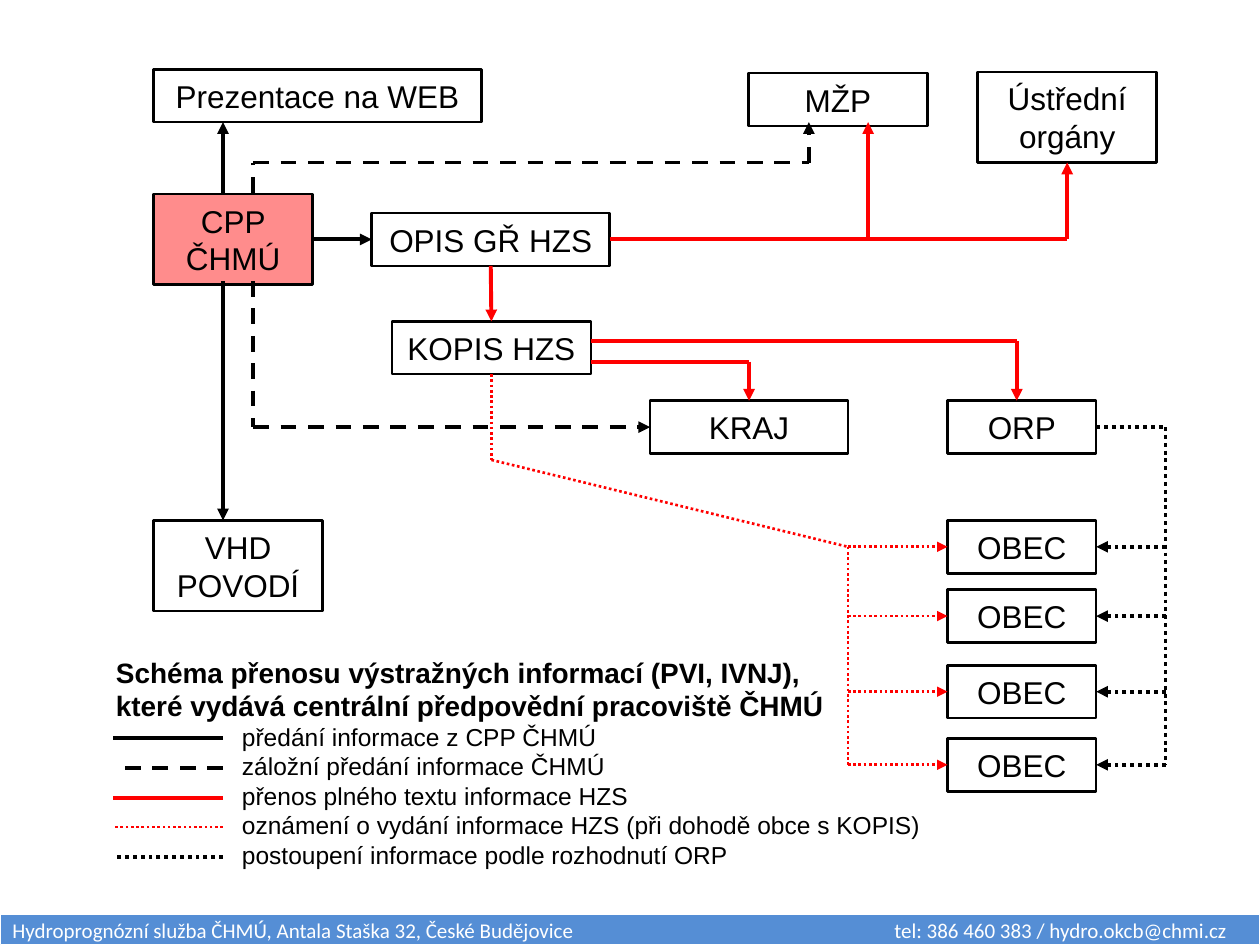
"""Builds a flow chart of how flood warnings are passed on."""
from dataclasses import dataclass
from typing import Any, Union

from lxml.etree import SubElement
from pptx import Presentation
from pptx.dml.color import RGBColor
from pptx.enum.dml import MSO_LINE
from pptx.enum.shapes import MSO_CONNECTOR, MSO_SHAPE
from pptx.enum.text import MSO_ANCHOR, MSO_AUTO_SIZE, PP_ALIGN
from pptx.oxml.ns import qn
from pptx.util import Inches, Pt

HUES = {"ink": "000000", "red": "FF0000", "blue": "558ED5", "white": "FFFFFF"}
COLS, ROWS = 100, 75
LOW, TALL = 4.2, 7.2
TOP, LEFT, BASE, RIGHT = range(4)
FRAME = {"word_wrap": True, "auto_size": MSO_AUTO_SIZE.NONE}
MID = FRAME | {"vertical_anchor": MSO_ANCHOR.MIDDLE}
FLUSH = FRAME | {"vertical_anchor": MSO_ANCHOR.TOP, "margin_left": 0,
                 "margin_right": 0, "margin_top": 0, "margin_bottom": 0}


@dataclass(frozen=True)
class Box:
    """A labelled frame, in grid columns and rows."""
    text: str
    x: float
    y: float
    w: float
    h: float = LOW


@dataclass(frozen=True)
class Pen:
    """A line style."""
    hue: str
    width: float = 2.25
    dash: Any = None


@dataclass(frozen=True)
class Joint:
    """The middle of one side of a box."""
    box: str
    side: int


Stop = Union[Joint, tuple]


@dataclass(frozen=True)
class Route:
    """A chain of straight lines."""
    pen: Pen
    stops: tuple
    arrow: bool = True


SOLID = Pen("ink")
SPARE = Pen("ink", dash=MSO_LINE.DASH)
FULL = Pen("red")
NOTE = Pen("red", 1.5, MSO_LINE.ROUND_DOT)
PASS = Pen("ink", dash=MSO_LINE.ROUND_DOT)

TOWNS = {f"obec{i}": Box("OBEC", 75.2, y, 11.8)
         for i, y in enumerate((41.3, 46.8, 52.8, 58.6))}
BOXES = {
    "web": Box("Prezentace na WEB", 12.2, 5.5, 26),
    "mzp": Box("MŽP", 59.4, 5.8, 14.2),
    "state": Box("Ústřední orgány", 77.6, 5.7, 14.2, TALL),
    "cpp": Box("CPP ČHMÚ", 12.2, 15.4, 12.6, TALL),
    "opis": Box("OPIS GŘ HZS", 29.5, 16.9, 18.9),
    "kopis": Box("KOPIS HZS", 31.1, 25.5, 15.8),
    "kraj": Box("KRAJ", 51.6, 31.8, 15.7),
    "orp": Box("ORP", 75.2, 31.8, 11.8),
    "vhd": Box("VHD POVODÍ", 12.2, 41.3, 13.4, TALL),
} | TOWNS
MAIN, SIDE, RED, BLACK = 17.7, 20.1, 67.3, 92.5
MIDS = {name: town.y + LOW / 2 for name, town in TOWNS.items()}
FIRST, LAST = MIDS["obec0"], MIDS["obec3"]

ROUTES = [
    Route(SOLID, (Joint("cpp", RIGHT), Joint("opis", LEFT))),
    Route(SOLID, ((MAIN, 15.3), (MAIN, 9.7))),
    Route(SOLID, ((MAIN, 22.3), (MAIN, 41.3))),
    Route(SPARE, ((SIDE, 15.3), (SIDE, 12.9), (64.2, 12.9), (64.2, 9.7))),
    Route(SPARE, ((SIDE, 22.3), (SIDE, 33.9), Joint("kraj", LEFT))),
    Route(FULL, (Joint("opis", BASE), Joint("kopis", TOP))),
    Route(FULL, (Joint("opis", RIGHT), (84.7, 19), Joint("state", BASE))),
    Route(FULL, ((68.9, 19), (68.9, 9.7))),
    Route(FULL, ((46.9, 27.1), (80.7, 27.1), (80.7, 31.8))),
    Route(FULL, ((46.9, 28.7), (59.45, 28.7), Joint("kraj", TOP))),
    Route(NOTE, (Joint("kopis", BASE), (39, 36.5), (RED, FIRST), (RED, LAST)), False),
    Route(PASS, (Joint("orp", RIGHT), (BLACK, 33.9), (BLACK, LAST)), False),
]
for name, mid in MIDS.items():
    ROUTES += [Route(NOTE, ((RED, mid), Joint(name, LEFT))),
               Route(PASS, ((BLACK, mid), Joint(name, RIGHT)))]

HEAD = ("Schéma přenosu výstražných informací (PVI, IVNJ),",
        "které vydává centrální předpovědní pracoviště ČHMÚ")
KEY = {
    "předání informace z CPP ČHMÚ": SOLID,
    "záložní předání informace ČHMÚ": SPARE,
    "přenos plného textu informace HZS": FULL,
    "oznámení o vydání informace HZS (při dohodě obce s KOPIS)": NOTE,
    "postoupení informace podle rozhodnutí ORP": PASS,
}
STEP = 2.35
ROUTES += [Route(pen, ((MAIN, 58.6 + STEP * i), (9, 58.6 + STEP * i)), False)
           for i, pen in enumerate(KEY.values())]
FOOT = ("Hydroprognózní služba ČHMÚ, Antala Staška 32, České Budějovice"
        "\ttel: 386 460 383 / hydro.okcb@chmi.cz")

deck = Presentation()
deck.slide_width, deck.slide_height = Inches(10), Inches(7.5)
slide = deck.slides.add_slide(deck.slide_layouts[1])


def hue(name: str) -> RGBColor:
    """Look up a colour."""
    return RGBColor.from_string(HUES[name])


def spot(x: float, y: float) -> tuple:
    """Turn columns and rows into slide lengths."""
    return round(deck.slide_width * x / COLS), round(deck.slide_height * y / ROWS)


def apply(item: Any, form: dict) -> None:
    """Set every attribute in a format dict."""
    for key, value in form.items():
        setattr(item, key, value)


def write(shape: Any, lines: tuple, size: float, ink: str = "ink", face: str = "Arial",
          bold: bool = False, align: Any = PP_ALIGN.LEFT, form: dict = MID) -> None:
    """Fill a shape with formatted paragraphs."""
    frame = shape.text_frame
    apply(frame, form)
    frame.text = "\n".join(lines)
    for para in frame.paragraphs:
        apply(para, {"alignment": align, "space_before": Pt(0)})
        apply(para.font, {"size": Pt(size), "name": face, "bold": bold})
        para.font.color.rgb = hue(ink)


def rect(box: Box, edge: str = "ink", width: float = 1.5) -> Any:
    """Draw an empty frame."""
    shape = slide.shapes.add_shape(MSO_SHAPE.RECTANGLE, *spot(box.x, box.y), *spot(box.w, box.h))
    shape.shadow.inherit = False
    shape.fill.background()
    shape.line.color.rgb = hue(edge)
    shape.line.width = Pt(width)
    return shape


def place(stop: Stop) -> tuple:
    """Find where a stop lies on the grid."""
    if not isinstance(stop, Joint):
        return stop
    box = BOXES[stop.box]
    dx, dy = ((0.5, 0), (0, 0.5), (0.5, 1), (1, 0.5))[stop.side]
    return box.x + box.w * dx, box.y + box.h * dy


def link(pen: Pen, start: Stop, end: Stop, arrow: bool) -> None:
    """Draw one straight line, joined to boxes where it can be."""
    wire = slide.shapes.add_connector(MSO_CONNECTOR.STRAIGHT, *spot(*place(start)), *spot(*place(end)))
    for stop, join in ((start, wire.begin_connect), (end, wire.end_connect)):
        if isinstance(stop, Joint):
            join(frames[stop.box], stop.side)
    wire.line.color.rgb = hue(pen.hue)
    apply(wire.line, {"width": Pt(pen.width), "dash_style": pen.dash})
    if arrow:
        SubElement(wire.line._get_or_add_ln(), qn("a:tailEnd"), type="triangle")
    SubElement(wire._element.spPr, qn("a:effectLst"))


def move(shape: Any, box: Box) -> None:
    """Put a placeholder on the grid."""
    (left, top), (width, height) = spot(box.x, box.y), spot(box.w, box.h)
    apply(shape, {"left": left, "top": top, "width": width, "height": height})


title, body = slide.placeholders
move(title, Box("", 9.2, 52, 64, 5.2))
write(title, HEAD, 16, bold=True, form=FLUSH)
move(body, Box("", 19.2, 57.3, 56, STEP * len(KEY)))
write(body, tuple(KEY), 14, form=FLUSH)
for para in body.text_frame.paragraphs:
    props = para._p.get_or_add_pPr()
    props.set("marL", "0")
    props.set("indent", "0")
    SubElement(props, qn("a:buNone"))

bar = rect(Box("", 0, 72.6, COLS, 2.4), "white", 0.5)
bar.fill.solid()
bar.fill.fore_color.rgb = hue("blue")
write(bar, (FOOT,), 12, "white", "Calibri")
tabs = SubElement(bar.text_frame.paragraphs[0]._p.get_or_add_pPr(), qn("a:tabLst"))
SubElement(tabs, qn("a:tab"), pos=str(Inches(7)), algn="l")

frames = {name: rect(box) for name, box in BOXES.items()}
for name, box in BOXES.items():
    write(frames[name], (box.text,), 18, align=PP_ALIGN.CENTER)
fill = frames["cpp"].fill
fill.solid()
fill.fore_color.rgb = hue("red")
SubElement(fill._xPr.find(qn("a:solidFill"))[0], qn("a:alpha"), val="45000")

for route in ROUTES:
    ends = list(zip(route.stops, route.stops[1:]))
    for i, (start, end) in enumerate(ends, 1):
        link(route.pen, start, end, route.arrow and i == len(ends))

deck.save("out.pptx")
